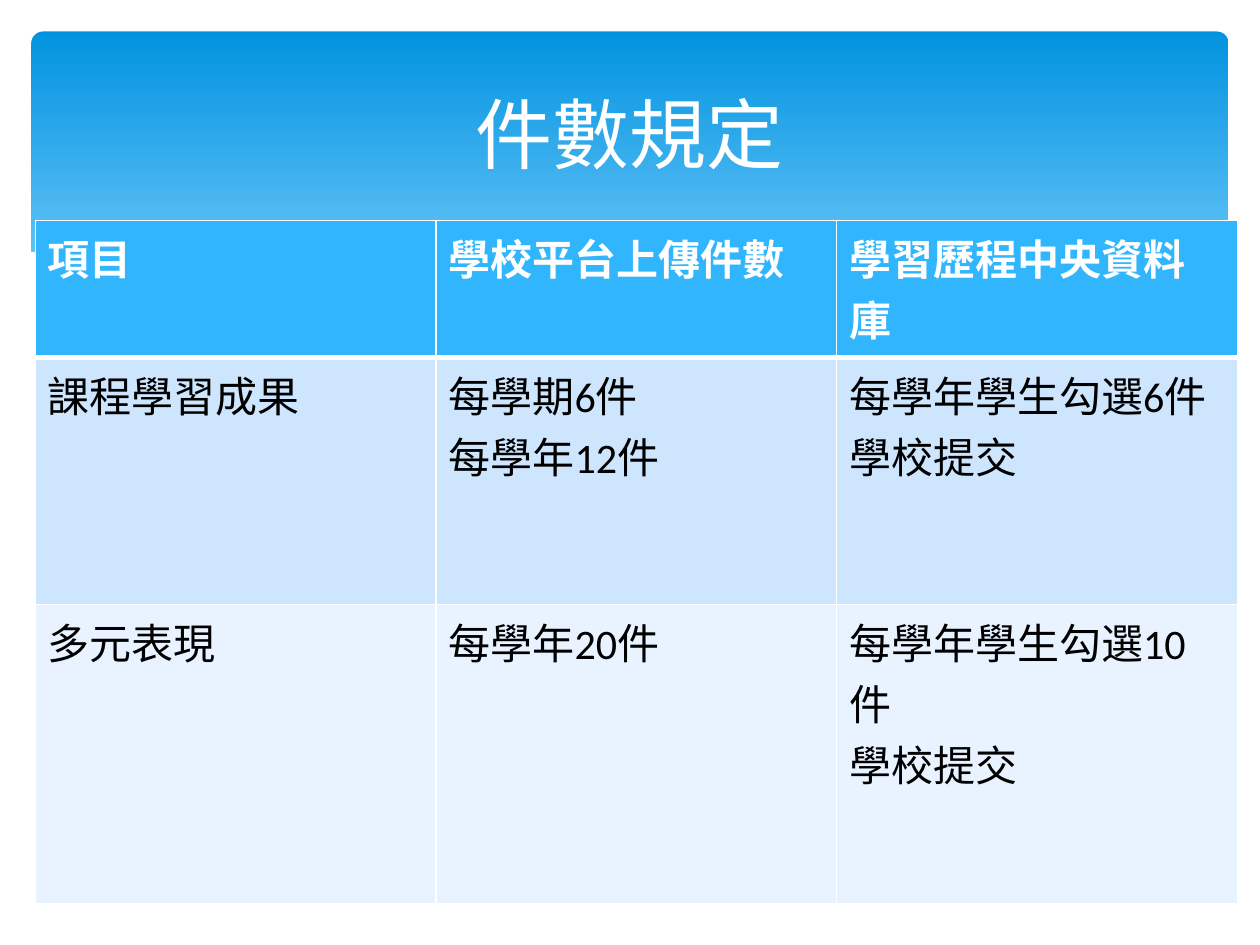
"""Build the slide that lists how many items may be uploaded and submitted."""
from dataclasses import dataclass

from lxml.etree import SubElement
from pptx import Presentation
from pptx.dml.color import RGBColor
from pptx.enum.shapes import MSO_SHAPE
from pptx.enum.text import MSO_ANCHOR, PP_ALIGN
from pptx.oxml.ns import qn
from pptx.util import Inches, Pt


@dataclass(frozen=True)
class Theme:
    font: str = "Calibri"
    title_size: int = 44
    table_size: int = 24
    white: str = "FFFFFF"
    black: str = "000000"
    banner_top: str = "0293E0"
    banner_bottom: str = "83D3FE"
    header: str = "31B6FD"
    border: float = 1
    header_border: float = 3


@dataclass(frozen=True)
class Box:
    left: float
    top: float
    width: float
    height: float

    def lengths(self) -> list:
        return [Inches(value) for value in (self.left, self.top, self.width, self.height)]


@dataclass(frozen=True)
class TableRow:
    height: float
    fill: str
    texts: tuple
    is_header: bool = False


THEME = Theme()
WIDTH, HEIGHT = 10, 7.5
MARGIN = WIDTH / 40
BANNER = Box(MARGIN, MARGIN, WIDTH - 2 * MARGIN, 2.7)
TITLE = Box(WIDTH / 20, 0.37, WIDTH * 0.9, 1.37)
TABLE_LEFT, TABLE_TOP, COLUMN_WIDTH = 0.28, 1.75, 3.18
ROWS = (
    TableRow(1.09, THEME.header, ("項目", "學校平台上傳件數", "學習歷程中央資料庫"), True),
    TableRow(1.96, "CEE5FE", ("課程學習成果", "每學期6件\n每學年12件", "每學年學生勾選6件\n學校提交")),
    TableRow(2.37, "E8F3FF", ("多元表現", "每學年20件", "每學年學生勾選10件\n學校提交")),
)
WAVE = (
    (9.77, 2.46), (9.4, 2.59), (8.99, 2.69), (8.5, 2.75), (8.09, 2.77), (7.61, 2.75),
    (7.08, 2.7), (6.48, 2.62), (5.79, 2.5), (5.03, 2.33), (4.18, 2.13), (3.4, 1.97),
    (2.71, 1.88), (2.11, 1.84), (1.61, 1.84), (1.19, 1.87), (0.85, 1.93), (0.52, 2.01),
    (0.36, 2.07), (0.23, 2.13), (0.23, 3.29), (9.77, 3.29),
)


def write_text(frame, text: str, *, size: float, color: str, bold: bool = False,
               align: PP_ALIGN = PP_ALIGN.LEFT) -> None:
    """Write one paragraph for each line of the text."""
    frame.word_wrap = True
    for index, line in enumerate(text.split("\n")):
        paragraph = frame.add_paragraph() if index else frame.paragraphs[0]
        paragraph.alignment = align
        run = paragraph.add_run()
        run.text = line
        run.font.name = THEME.font
        run.font.size = Pt(size)
        run.font.bold = bold
        run.font.color.rgb = RGBColor.from_string(color)


def draw_banner(slide) -> None:
    """Draw the rounded gradient banner."""
    shape = slide.shapes.add_shape(MSO_SHAPE.ROUNDED_RECTANGLE, *BANNER.lengths())
    shape.adjustments[0] = 0.034
    shape.shadow.inherit = False
    shape.line.fill.background()
    shape.fill.gradient()
    shape.fill.gradient_angle = 270
    stops = ((0, THEME.banner_top), (0.9, THEME.banner_bottom))
    for stop, (position, color) in zip(shape.fill.gradient_stops, stops):
        stop.position = position
        stop.color.rgb = RGBColor.from_string(color)


def draw_wave(slide) -> None:
    """Draw the white wave that cuts off the foot of the banner."""
    start, *others = WAVE
    builder = slide.shapes.build_freeform(*start, scale=Inches(1))
    builder.add_line_segments(others, close=True)
    shape = builder.convert_to_shape()
    shape.shadow.inherit = False
    shape.line.fill.background()
    shape.fill.solid()
    shape.fill.fore_color.rgb = RGBColor.from_string(THEME.white)


def set_border(cell, side: str, width: float) -> None:
    """Give one side of a cell a white border."""
    properties = cell._tc.get_or_add_tcPr()
    line = SubElement(properties, qn(f"a:ln{side}"), w=str(Pt(width)))
    fill = SubElement(line, qn("a:solidFill"))
    SubElement(fill, qn("a:srgbClr"), val=THEME.white)


def draw_table(slide) -> None:
    """Draw the table of item limits."""
    columns = len(ROWS[0].texts)
    box = Box(TABLE_LEFT, TABLE_TOP, columns * COLUMN_WIDTH, sum(row.height for row in ROWS))
    table = slide.shapes.add_table(len(ROWS), columns, *box.lengths()).table
    for column in table.columns:
        column.width = Inches(COLUMN_WIDTH)
    for row_index, row in enumerate(ROWS):
        table.rows[row_index].height = Inches(row.height)
        below_header = row_index > 0 and ROWS[row_index - 1].is_header
        widths = {
            "L": THEME.border,
            "R": THEME.border,
            "T": THEME.header_border if below_header else THEME.border,
            "B": THEME.header_border if row.is_header else THEME.border,
        }
        for cell, text in zip(table.rows[row_index].cells, row.texts):
            for side, width in widths.items():
                set_border(cell, side, width)
            cell.fill.solid()
            cell.fill.fore_color.rgb = RGBColor.from_string(row.fill)
            write_text(cell.text_frame, text, size=THEME.table_size, bold=row.is_header,
                       color=THEME.white if row.is_header else THEME.black)


def draw_title(slide) -> None:
    """Draw the centred title on the banner."""
    frame = slide.shapes.add_textbox(*TITLE.lengths()).text_frame
    frame.vertical_anchor = MSO_ANCHOR.MIDDLE
    write_text(frame, "件數規定", size=THEME.title_size, color=THEME.white,
               align=PP_ALIGN.CENTER)


def main() -> None:
    """Build and save the presentation."""
    presentation = Presentation()
    presentation.slide_width = Inches(WIDTH)
    presentation.slide_height = Inches(HEIGHT)
    slide = presentation.slides.add_slide(presentation.slide_layouts[6])
    draw_banner(slide)
    draw_wave(slide)
    draw_table(slide)
    draw_title(slide)
    presentation.save("out.pptx")


if __name__ == "__main__":
    main()
